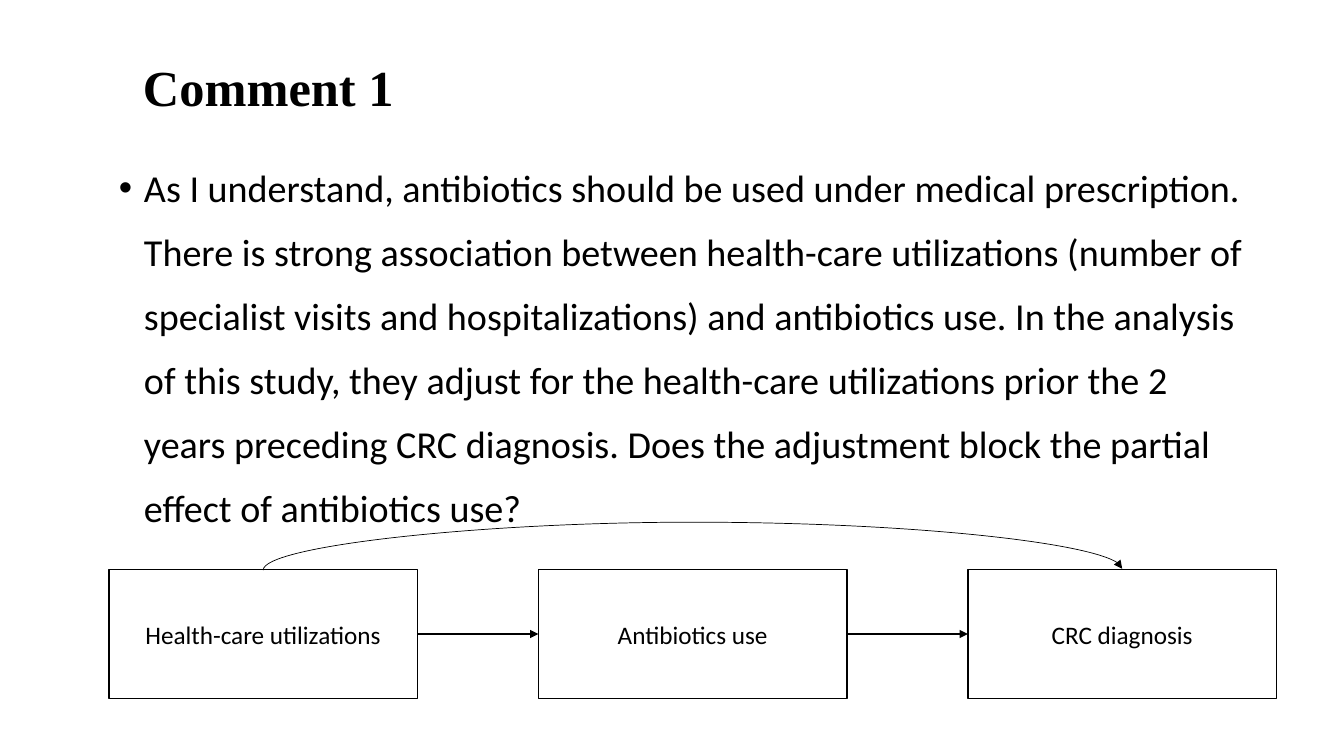
from lxml import etree
from pptx import Presentation
from pptx.dml.color import RGBColor
from pptx.enum.shapes import MSO_CONNECTOR, MSO_SHAPE
from pptx.enum.text import MSO_ANCHOR, PP_ALIGN
from pptx.oxml.ns import qn
from pptx.util import Inches, Pt

TITLE = "Comment 1"
BODY = (
    "As I understand, antibiotics should be used under medical prescription. "
    "There is strong association between health-care utilizations (number of "
    "specialist visits and hospitalizations) and antibiotics use. In the analysis "
    "of this study, they adjust for the health-care utilizations prior the 2 years "
    "preceding CRC diagnosis. Does the adjustment block the partial effect of "
    "antibiotics use?"
)
STEPS = ["Health-care utilizations", "Antibiotics use", "CRC diagnosis"]

BLACK = RGBColor(0x00, 0x00, 0x00)
WHITE = RGBColor(0xFF, 0xFF, 0xFF)
RECT = MSO_SHAPE.RECTANGLE
STRAIGHT, CURVE = MSO_CONNECTOR.STRAIGHT, MSO_CONNECTOR.CURVE
TOP, MIDDLE = MSO_ANCHOR.TOP, MSO_ANCHOR.MIDDLE
LEFT, CENTER = PP_ALIGN.LEFT, PP_ALIGN.CENTER
TOP_SITE, LEFT_SITE, RIGHT_SITE = 0, 1, 3

ROW_LEFT, ROW_TOP = 1.08, 5.65
BOX_W, BOX_H, PITCH = 3.06, 1.28, 4.26
ARC_RISE = 0.48


def write(sp, text, size=18, font="Calibri", bold=False, align=LEFT,
          anchor=TOP, spacing=1.0, before=0, bullet=None):
    tf = sp.text_frame
    tf.word_wrap = True
    tf.vertical_anchor = anchor
    p = tf.paragraphs[0]
    p.alignment = align
    p.line_spacing = spacing
    p.space_before = Pt(before)
    if bullet:
        pPr = p._p.get_or_add_pPr()
        pPr.set("marL", str(Inches(0.25)))
        pPr.set("indent", str(Inches(-0.25)))
        etree.SubElement(pPr, qn("a:buFont")).set("typeface", "Arial")
        etree.SubElement(pPr, qn("a:buChar")).set("char", bullet)
    r = p.add_run()
    r.text = text
    r.font.size = Pt(size)
    r.font.name = font
    r.font.bold = bold
    r.font.color.rgb = BLACK


def add_text(s, box, text, **fmt):
    write(s.shapes.add_textbox(*map(Inches, box)), text, **fmt)


def add_box(s, column, text):
    left = ROW_LEFT + column * PITCH
    sp = s.shapes.add_shape(RECT, *map(Inches, (left, ROW_TOP, BOX_W, BOX_H)))
    sp.shadow.inherit = False
    sp.fill.solid()
    sp.fill.fore_color.rgb = WHITE
    sp.line.color.rgb = BLACK
    sp.line.width = Pt(1)
    write(sp, text, align=CENTER, anchor=MIDDLE)
    return sp


def add_arrow(s, kind, start, start_site, end, end_site, width):
    c = s.shapes.add_connector(kind, 0, 0, 0, 0)
    c.begin_connect(start, start_site)
    c.end_connect(end, end_site)
    c.line.color.rgb = BLACK
    c.line.width = Pt(width)
    etree.SubElement(c.line._get_or_add_ln(), qn("a:tailEnd")).set("type", "triangle")
    etree.SubElement(c._element.spPr, qn("a:effectLst"))
    return c


def bend_over(c, rise):
    span, depth = c.width, Pt(1)
    mid_x, mid_y = c.left + span // 2, c.top
    c.left, c.top = mid_x - depth // 2, mid_y - span // 2
    c.width, c.height = depth, span
    spPr = c._element.spPr
    for name, value in (("rot", "5400000"), ("flipH", "1"), ("flipV", "1")):
        spPr.xfrm.set(name, value)
    geom = spPr.find(qn("a:prstGeom"))
    guides = geom.find(qn("a:avLst"))
    if guides is None:
        guides = etree.SubElement(geom, qn("a:avLst"))
    guide = etree.SubElement(guides, qn("a:gd"))
    guide.set("name", "adj1")
    guide.set("fmla", f"val {round(Inches(rise) / depth * 100000)}")


def main():
    prs = Presentation()
    prs.slide_width, prs.slide_height = Inches(13.33), Inches(7.5)
    s = prs.slides.add_slide(prs.slide_layouts[6])
    add_text(s, (1.32, 0.17, 10.7, 1.45), TITLE, size=36, font="Times New Roman",
             bold=True, anchor=MIDDLE, spacing=0.9)
    add_text(s, (1.08, 1.4, 11.5, 3.84), BODY, size=27.2, spacing=1.4,
             before=10, bullet="•")
    boxes = [add_box(s, i, text) for i, text in enumerate(STEPS)]
    for a, b in zip(boxes, boxes[1:]):
        add_arrow(s, STRAIGHT, a, RIGHT_SITE, b, LEFT_SITE, 1)
    arc = add_arrow(s, CURVE, boxes[0], TOP_SITE, boxes[-1], TOP_SITE, 0.5)
    bend_over(arc, ARC_RISE)
    prs.save("out.pptx")


if __name__ == "__main__":
    main()
